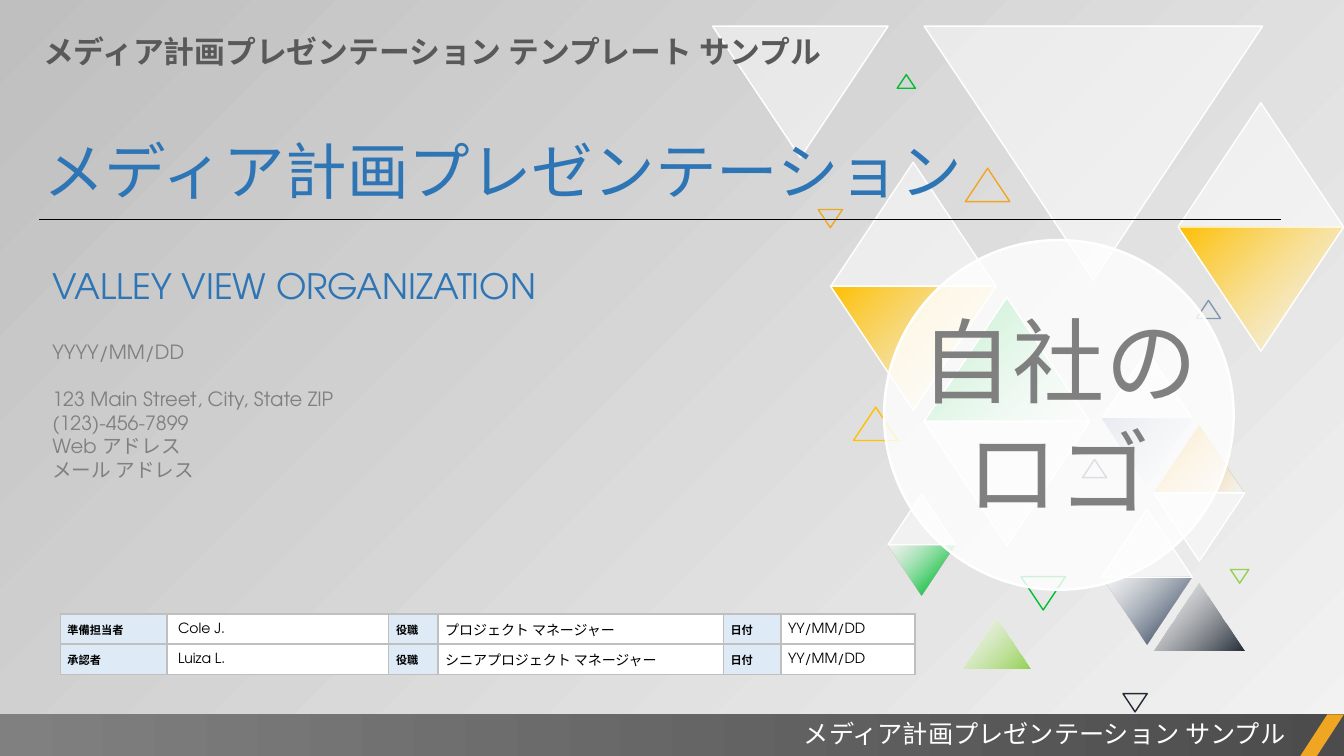
from lxml import etree
from pptx import Presentation
from pptx.dml.color import RGBColor
from pptx.enum import shapes, text
from pptx.oxml import ns
from pptx.util import Cm, Pt

FONT = "TeX Gyre Adventor"
WHITE = RGBColor(0xFF, 0xFF, 0xFF)
BLACK = RGBColor(0x00, 0x00, 0x00)
PALE = RGBColor(0xF2, 0xF2, 0xF2)
SILVER = RGBColor(0xBF, 0xBF, 0xBF)
GREY = RGBColor(0x80, 0x80, 0x80)
CHARCOAL = RGBColor(0x4C, 0x4C, 0x4C)
HEADER = RGBColor(0x59, 0x59, 0x59)
BLUE = RGBColor(0x2E, 0x75, 0xB6)
ICE = RGBColor(0xDE, 0xEB, 0xF7)
GOLD = RGBColor(0xFF, 0xC0, 0x00)
ORANGE = RGBColor(0xF0, 0xA6, 0x22)
GREEN = RGBColor(0x00, 0xBD, 0x32)
LIME = RGBColor(0x92, 0xD0, 0x50)
NIGHT = RGBColor(0x22, 0x2A, 0x35)
SLATE = RGBColor(0x44, 0x54, 0x6A)
STEEL = RGBColor(0x84, 0x97, 0xB0)


def paint(fill, stops, angle=135):
    if len(stops) == 1:
        fill.solid()
        fill.fore_color.rgb = stops[0][1]
        return
    fill.gradient()
    fill.gradient_angle = angle
    for stop, (position, colour) in zip(fill.gradient_stops, stops):
        stop.position = position
        stop.color.rgb = colour


def write(paragraph, words, size, colour, bold=False, align=text.PP_ALIGN.LEFT):
    paragraph.text = words
    paragraph.alignment = align
    font = paragraph.font
    font.name, font.size, font.bold = FONT, Pt(size), bold
    font.color.rgb = colour


deck = Presentation()
deck.slide_width, deck.slide_height = Cm(33.87), Cm(19.05)
page = deck.slides.add_slide(deck.slide_layouts[5])
paint(page.background.fill, [(0, PALE), (1, SILVER)])

# left, top, width, rotation, fill stops, outline
glass = [(0, WHITE)]
triangles = [
    (20.93, 4.09, 4.17, 0, glass, WHITE),
    (20.93, 7.21, 4.17, 180, [(0, GOLD), (1, WHITE)], WHITE),
    (23.29, 7.49, 4.17, 0, [(0, WHITE), (0.82, GREEN)], WHITE),
    (23.29, 10.62, 4.17, 180, glass, WHITE),
    (23.29, 0.66, 8.53, 180, glass, WHITE),
    (29.06, 14.68, 2.29, 0, [(0, NIGHT), (1, WHITE)], None),
    (27.76, 14.53, 2.29, 180, [(0, WHITE), (0.82, SLATE)], None),
    (27.76, 12.83, 2.29, 0, glass, WHITE),
    (27.76, 8.84, 2.29, 0, glass, WHITE),
    (27.76, 10.54, 2.29, 180, [(0, STEEL), (1, WHITE)], None),
    (29.08, 10.72, 2.29, 0, [(0, WHITE), (0.82, ORANGE)], None),
    (29.08, 12.42, 2.29, 180, glass, WHITE),
    (24.26, 15.57, 1.7, 0, [(0, LIME), (1, WHITE)], None),
    (22.38, 13.72, 1.7, 180, [(0, WHITE), (0.82, GREEN)], None),
    (22.38, 12.45, 1.7, 0, glass, WHITE),
    (29.69, 2.59, 4.17, 0, glass, WHITE),
    (29.69, 5.72, 4.17, 180, [(0, GOLD), (1, WHITE)], WHITE),
    (25.73, 14.53, 1.12, 180, None, GREEN),
    (21.51, 10.26, 1.12, 0, None, GOLD),
    (27.28, 11.58, 0.61, 0, None, SLATE),
    (28.3, 17.48, 0.61, 180, None, NIGHT),
    (20.62, 5.28, 0.61, 180, None, ORANGE),
    (30.15, 7.57, 0.61, 0, None, STEEL),
    (22.61, 1.88, 0.46, 0, None, GREEN),
    (31.01, 14.35, 0.46, 180, None, LIME),
    (24.33, 4.24, 1.12, 0, None, ORANGE),
    (17.96, 0.66, 4.42, 180, glass, WHITE),
]
for left, top, width, rotation, stops, outline in triangles:
    triangle = page.shapes.add_shape(shapes.MSO_SHAPE.ISOSCELES_TRIANGLE,
                                     Cm(left), Cm(top), Cm(width), Cm(width * 0.75))
    triangle.rotation = rotation
    triangle.shadow.inherit = False
    if stops:
        paint(triangle.fill, stops)
        for colour in triangle._element.spPr.findall(".//" + ns.qn("a:srgbClr")):
            if colour.get("val") == str(WHITE):
                etree.SubElement(colour, ns.qn("a:alpha"), val="50000")
    else:
        triangle.fill.background()
    if outline:
        triangle.line.color.rgb = outline
        triangle.line.width = Pt(1)
    else:
        triangle.line.fill.background()

header = page.shapes.add_textbox(Cm(0.84), Cm(0.71), Cm(22.99), Cm(1.19)).text_frame
header.word_wrap = True
write(header.paragraphs[0], "メディア計画プレゼンテーション テンプレート サンプル", 22, HEADER, True)

footer = page.shapes.add_shape(shapes.MSO_SHAPE.RECTANGLE, 0, Cm(18), deck.slide_width, Cm(1.05))
paint(footer.fill, [(0, GREY), (1, CHARCOAL)], 0)
accent = page.shapes.add_shape(shapes.MSO_SHAPE.PARALLELOGRAM, Cm(32.77), Cm(18), Cm(1.1), Cm(1.05))
accent.adjustments[0] = 0.65
paint(accent.fill, [(0, ORANGE)])
for band in (footer, accent):
    band.shadow.inherit = False
    band.line.fill.background()

caption = page.shapes.add_textbox(Cm(13.34), Cm(17.98), Cm(19.3), Cm(1.02)).text_frame
caption.word_wrap = True
write(caption.paragraphs[0], "メディア計画プレゼンテーション サンプル", 18, WHITE, align=text.PP_ALIGN.RIGHT)

title = page.shapes.title
title.left, title.top, title.width, title.height = Cm(0.84), Cm(3.23), Cm(31.88), Cm(2.13)
title.text_frame.vertical_anchor = text.MSO_ANCHOR.TOP
title.text_frame.auto_size = text.MSO_AUTO_SIZE.NONE
write(title.text_frame.paragraphs[0], "メディア計画プレゼンテーション", 44, BLUE)
page.shapes._spTree.append(title._element)

contact = page.shapes.add_textbox(Cm(1.07), Cm(6.53), Cm(23.06), Cm(5.77)).text_frame
contact.word_wrap = True
write(contact.paragraphs[0], "VALLEY VIEW ORGANIZATION", 25, BLUE)
details = [
    ("YYYY/MM/DD", 24),
    ("123 Main Street, City, State ZIP", 17),
    ("(123)-456-7899", 0),
    ("Web アドレス", 0),
    ("メール アドレス", 0),
]
for words, gap in details:
    paragraph = contact.add_paragraph()
    write(paragraph, words, 14, GREY)
    paragraph.space_before = Pt(gap)

rule = page.shapes.add_connector(shapes.MSO_CONNECTOR.STRAIGHT, Cm(0.99), Cm(5.54), Cm(32.28), Cm(5.54))
rule.line.color.rgb = BLACK
rule.line.width = Pt(0.5)
etree.SubElement(rule._element.spPr, ns.qn("a:effectLst"))

logo = page.shapes.add_shape(shapes.MSO_SHAPE.OVAL, Cm(22.28), Cm(6.05), Cm(8.81), Cm(8.81))
logo.shadow.inherit = False
paint(logo.fill, glass)
etree.SubElement(logo._element.spPr.find(".//" + ns.qn("a:srgbClr")), ns.qn("a:alpha"), val="81000")
logo.line.color.rgb = WHITE
logo.line.width = Pt(1.75)
frame = logo.text_frame
frame.word_wrap = False
frame.vertical_anchor = text.MSO_ANCHOR.MIDDLE
frame.margin_left = frame.margin_top = frame.margin_right = frame.margin_bottom = 0
for paragraph, words in zip((frame.paragraphs[0], frame.add_paragraph()), ("自社の", "ロゴ")):
    write(paragraph, words, 66, GREY, align=text.PP_ALIGN.CENTER)

rows = [
    ("準備担当者", "Cole J.", "役職", "プロジェクト マネージャー", "日付", "YY/MM/DD"),
    ("承認者", "Luiza L.", "役職", "シニアプロジェクト マネージャー", "日付", "YY/MM/DD"),
]
widths = [2.69, 5.59, 1.24, 7.19, 1.45, 3.38]
approvals = page.shapes.add_table(len(rows), len(widths), Cm(1.52), Cm(15.47), Cm(sum(widths)), Cm(1.52)).table
for column, width in zip(approvals.columns, widths):
    column.width = Cm(width)
for row_index, row in enumerate(rows):
    approvals.rows[row_index].height = Cm(0.76)
    for column_index, words in enumerate(row):
        cell = approvals.cell(row_index, column_index)
        label = column_index % 2 == 0
        cell.margin_left = Cm(0.28 if column_index == 1 else 0.18)
        cell.margin_right = Cm(0.18)
        cell.margin_top = cell.margin_bottom = 0
        cell.vertical_anchor = text.MSO_ANCHOR.MIDDLE
        paragraph = cell.text_frame.paragraphs[0]
        write(paragraph, words, 8 if label else 10, BLACK, label)
        paragraph.line_spacing = 1.07
        properties = cell._tc.get_or_add_tcPr()
        for side in ("a:lnL", "a:lnR", "a:lnT", "a:lnB"):
            border = etree.SubElement(properties, ns.qn(side), w=str(Pt(1)))
            solid = etree.SubElement(border, ns.qn("a:solidFill"))
            etree.SubElement(solid, ns.qn("a:srgbClr"), val=str(SILVER))
        paint(cell.fill, [(0, ICE if label else WHITE)])

deck.save("out.pptx")
